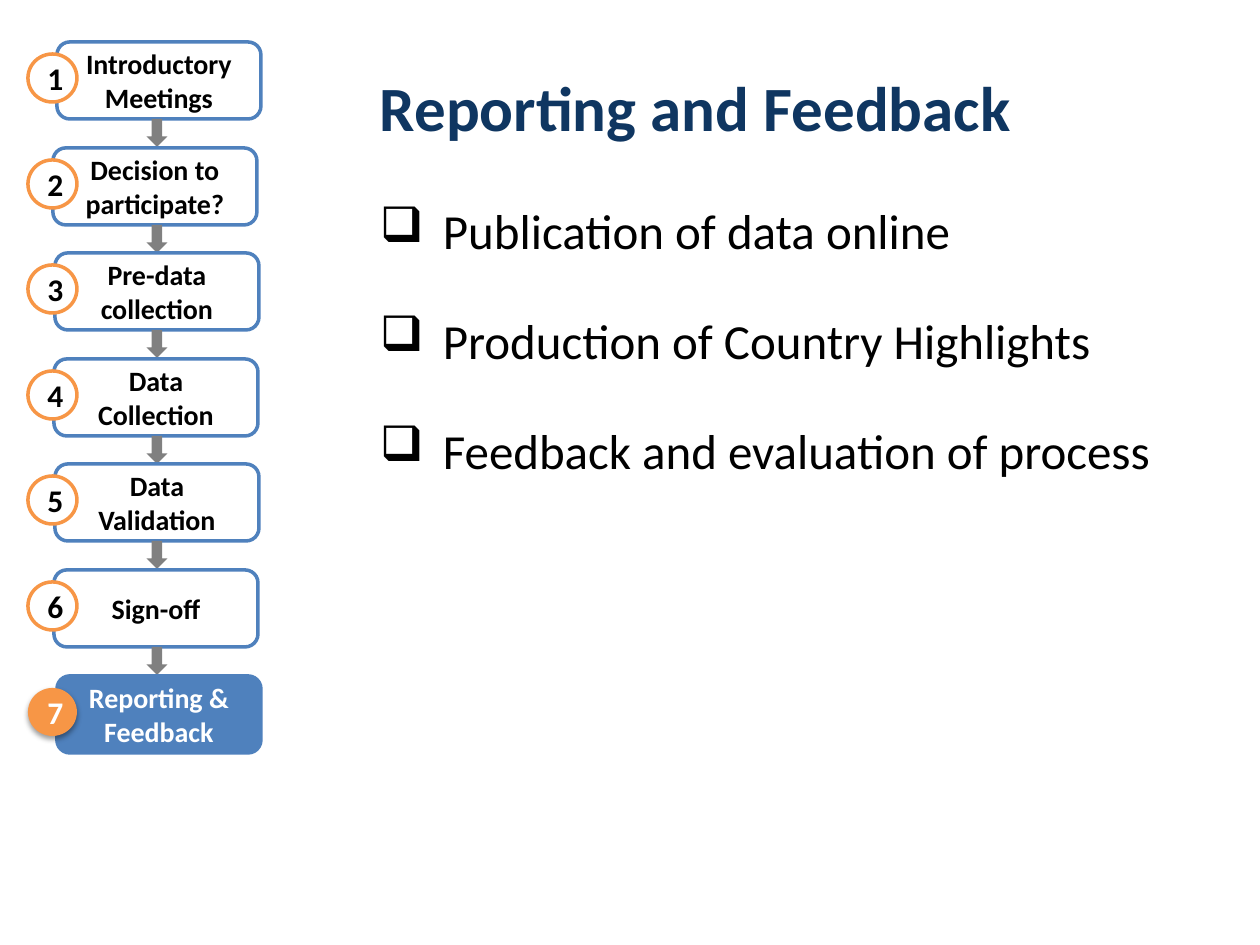
from lxml import etree
from pptx import Presentation
from pptx import util as u
from pptx.dml.color import RGBColor
from pptx.enum import shapes, text
from pptx.oxml import ns

PX = u.Inches(1) / 126
FONT = "Calibri"
WHITE = RGBColor(0xFF, 0xFF, 0xFF)
BLACK = RGBColor(0, 0, 0)
BLUE = RGBColor(0x4F, 0x81, 0xBD)
ORANGE = RGBColor(0xF7, 0x96, 0x46)
GREY = RGBColor(0x80, 0x80, 0x80)
NAVY = RGBColor(0x0F, 0x36, 0x61)

# Label and left edge of each step box
STEPS = [
    ("Introductory Meetings", 57),
    ("Decision to participate?", 53),
    ("Pre-data collection", 55),
    ("Data Collection", 54),
    ("Data Validation", 55),
    ("Sign-off", 54),
    ("Reporting & Feedback", 57),
]
FIRST_TOP, PITCH = 42, 105.6
BOX_W, BOX_H = 204, 77
ARROW_W, ARROW_H = 21, 28
BADGE_W, BADGE_H = 49, 48
COLUMN_CENTRE = 157
POINTS = [
    "Publication of data online",
    "Production of Country Highlights",
    "Feedback and evaluation of process",
]


def px(*lengths):
    return [u.Emu(round(length * PX)) for length in lengths]


def write(frame, lines, size, color=BLACK, bold=False, align=text.PP_ALIGN.LEFT,
          anchor=text.MSO_ANCHOR.MIDDLE, insets=(13, 6, 13, 6),
          bullet=None, before=0, after=0):
    """Fill a text frame; insets are left, top, right and bottom in px."""
    frame.word_wrap = True
    frame.vertical_anchor = anchor
    (frame.margin_left, frame.margin_top,
     frame.margin_right, frame.margin_bottom) = px(*insets)
    for i, line in enumerate(lines):
        paragraph = frame.paragraphs[0] if i == 0 else frame.add_paragraph()
        if bullet:
            add_bullet(paragraph, bullet)
        paragraph.alignment = align
        paragraph.space_before = u.Pt(before if i else 0)
        paragraph.space_after = u.Pt(after)
        run = paragraph.add_run()
        run.text = line
        run.font.name = FONT
        run.font.size = u.Pt(size)
        run.font.bold = bold
        run.font.color.rgb = color


def add_bullet(paragraph, char):
    properties = paragraph._p.get_or_add_pPr()
    indent = u.Inches(0.5)
    properties.set("marL", str(indent))
    properties.set("indent", str(-indent))
    etree.SubElement(properties, ns.qn("a:buChar")).set("char", char)


def add_solid(slide, kind, box, fill, line=None):
    solid = slide.shapes.add_shape(kind, *px(*box))
    solid.shadow.inherit = False
    solid.fill.solid()
    solid.fill.fore_color.rgb = fill
    if line is None:
        solid.line.fill.background()
    else:
        solid.line.color.rgb = line
        solid.line.width = u.Pt(2)
    return solid


def add_drop_shadow(solid):
    effects = solid._element.spPr.find(ns.qn("a:effectLst"))
    shadow = etree.SubElement(
        effects, ns.qn("a:outerShdw"), blurRad=str(u.Pt(3.1)),
        dist=str(u.Pt(1.6)), dir="5400000", rotWithShape="0")
    color = etree.SubElement(shadow, ns.qn("a:srgbClr"), val="000000")
    etree.SubElement(color, ns.qn("a:alpha"), val="38000")


def add_step(slide, index, label, left):
    top = round(FIRST_TOP + index * PITCH)
    current = index == len(STEPS) - 1
    color = WHITE if current else BLACK
    kinds = shapes.MSO_SHAPE

    box = add_solid(slide, kinds.ROUNDED_RECTANGLE, (left, top, BOX_W, BOX_H),
                    BLUE if current else WHITE, BLUE)
    write(box.text_frame, [label], 16, color, bold=True,
          align=text.PP_ALIGN.CENTER, insets=(18, 6, 18, 6))

    if not current:
        add_solid(slide, kinds.DOWN_ARROW,
                  (COLUMN_CENTRE - ARROW_W / 2, top + BOX_H, ARROW_W, ARROW_H), GREY)

    badge = add_solid(slide, kinds.OVAL, (28, top + 12, BADGE_W, BADGE_H),
                      ORANGE if current else WHITE, None if current else ORANGE)
    write(badge.text_frame, [str(index + 1)], 18, color, bold=True,
          align=text.PP_ALIGN.CENTER, insets=(6, 0, 0, 0))
    if current:
        add_drop_shadow(badge)


def add_text(slide, box, lines, size, **style):
    write(slide.shapes.add_textbox(*px(*box)).text_frame, lines, size, **style)


def main():
    deck = Presentation()
    deck.slide_width, deck.slide_height = u.Inches(10), u.Inches(7.5)
    slide = deck.slides.add_slide(deck.slide_layouts[6])
    for index, (label, left) in enumerate(STEPS):
        add_step(slide, index, label, left)
    add_text(slide, (367, 38, 845, 137), ["Reporting and Feedback"], 36,
             color=NAVY, bold=True)
    add_text(slide, (367, 195, 845, 300), POINTS, 28,
             anchor=text.MSO_ANCHOR.TOP, bullet="❑", before=5, after=24)
    deck.save("out.pptx")


if __name__ == "__main__":
    main()
